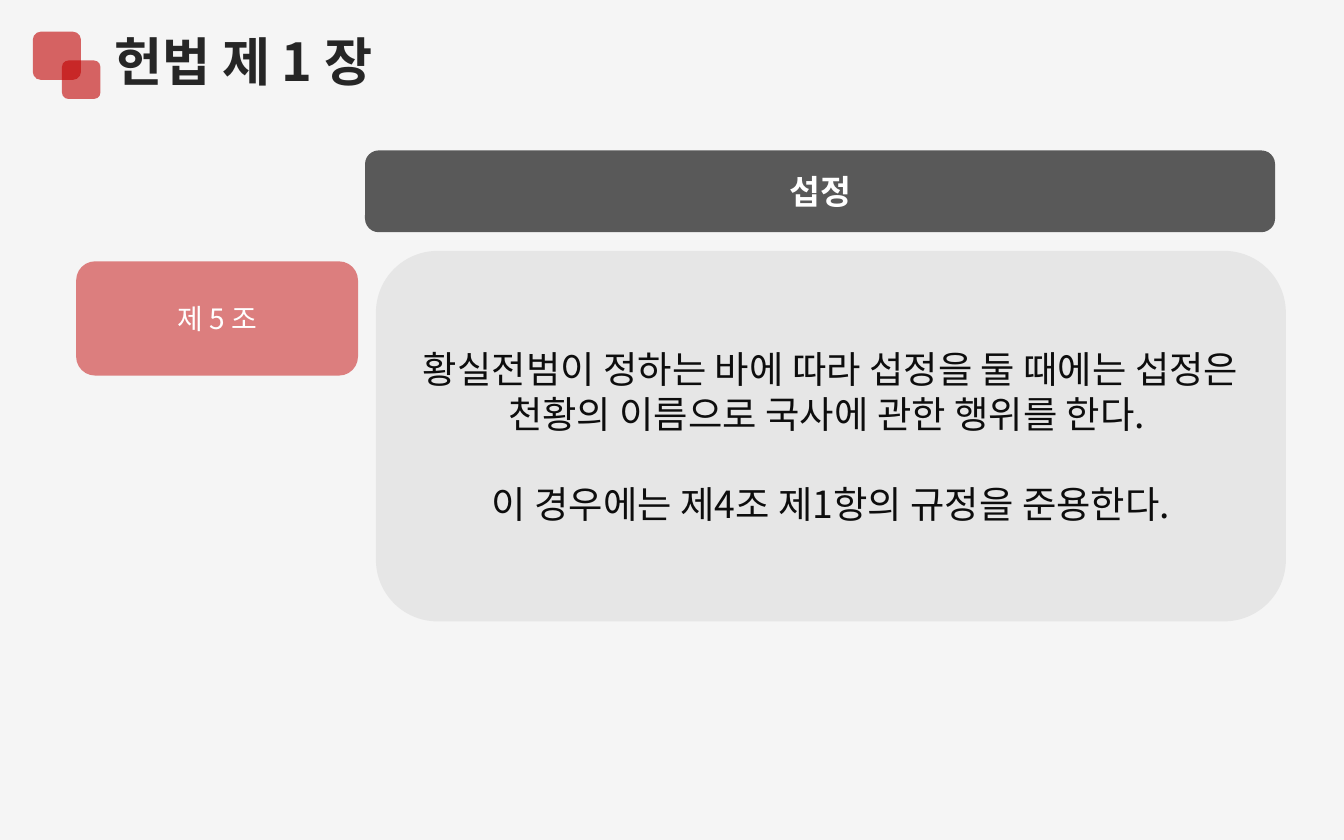
from pptx import Presentation
from pptx.dml.color import RGBColor
from pptx.enum.shapes import MSO_SHAPE as Shape
from pptx.enum.text import MSO_ANCHOR as Anchor, MSO_AUTO_SIZE as AutoSize, PP_ALIGN as Align
from pptx.oxml.ns import qn
from pptx.util import Pt
from lxml.etree import SubElement

FONT = "Noto Sans CJK KR"
RED = "C00000"


def color(hex_code):
    return RGBColor.from_string(hex_code)


class Builder:
    """Holds the shared style and the current slide."""

    def __init__(self, page, font):
        self.page = page
        self.font = font

    def background(self, hex_code):
        fill = self.page.background.fill
        fill.solid()
        fill.fore_color.rgb = color(hex_code)

    def set_text(self, shape, lines, size, hex_code, bold=False, align=Align.CENTER,
                 anchor=Anchor.MIDDLE, gap=0):
        frame = shape.text_frame
        frame.text = "\n".join(lines)
        frame.word_wrap = True
        frame.vertical_anchor = anchor
        for number, para in enumerate(frame.paragraphs):
            para.alignment = align
            para.space_before = Pt(gap if number else 0)
            for span in para.runs:
                span.font.name = self.font
                span.font.size = Pt(size)
                span.font.bold = bold
                span.font.color.rgb = color(hex_code)
                east_asian = SubElement(span.font._element, qn("a:ea"))
                east_asian.set("typeface", self.font)

    def title(self, text, left, top, width, height):
        title = self.page.shapes.title
        title.left, title.top, title.width, title.height = map(Pt, (left, top, width, height))
        self.set_text(title, [text], 28, "262626", bold=True, align=Align.LEFT, anchor=Anchor.TOP)
        title.text_frame.auto_size = AutoSize.NONE

    def panel(self, left, top, width, height, hex_code, opacity=100):
        panel = self.page.shapes.add_shape(
            Shape.ROUNDED_RECTANGLE, Pt(left), Pt(top), Pt(width), Pt(height))
        panel.shadow.inherit = False
        panel.line.fill.background()
        panel.fill.solid()
        panel.fill.fore_color.rgb = color(hex_code)
        if opacity < 100:
            tint = panel._element.spPr.find(".//" + qn("a:srgbClr"))
            SubElement(tint, qn("a:alpha")).set("val", str(opacity * 1000))
        return panel


def main():
    deck = Presentation()
    deck.slide_width, deck.slide_height = Pt(720), Pt(450)
    page = deck.slides.add_slide(deck.slide_layouts[5])
    builder = Builder(page, FONT)
    builder.background("F5F5F5")

    builder.title("헌법 제 1 장", 54, 12.2, 374.4, 41)
    for left, top, side in ((17.6, 17, 25.8), (33.2, 32.4, 20.6)):
        builder.panel(left, top, side, side, RED, opacity=60)

    article = builder.panel(201.4, 134.4, 487.5, 198.5, "E6E6E6")
    builder.set_text(article, [
        "황실전범이 정하는 바에 따라 섭정을 둘 때에는 섭정은 천황의 이름으로 국사에 관한 행위를 한다. ",
        "이 경우에는 제4조 제1항의 규정을 준용한다.",
    ], 20, "0D0D0D", gap=24)

    heading = builder.panel(195.6, 80.6, 487.5, 43.8, "595959")
    builder.set_text(heading, ["섭정"], 18, "FFFFFF", bold=True)

    label = builder.panel(40.8, 140, 151, 61.2, "DC7E7E")
    builder.set_text(label, ["제 5 조"], 15, "FFFFFF")

    deck.save("out.pptx")


if __name__ == "__main__":
    main()
